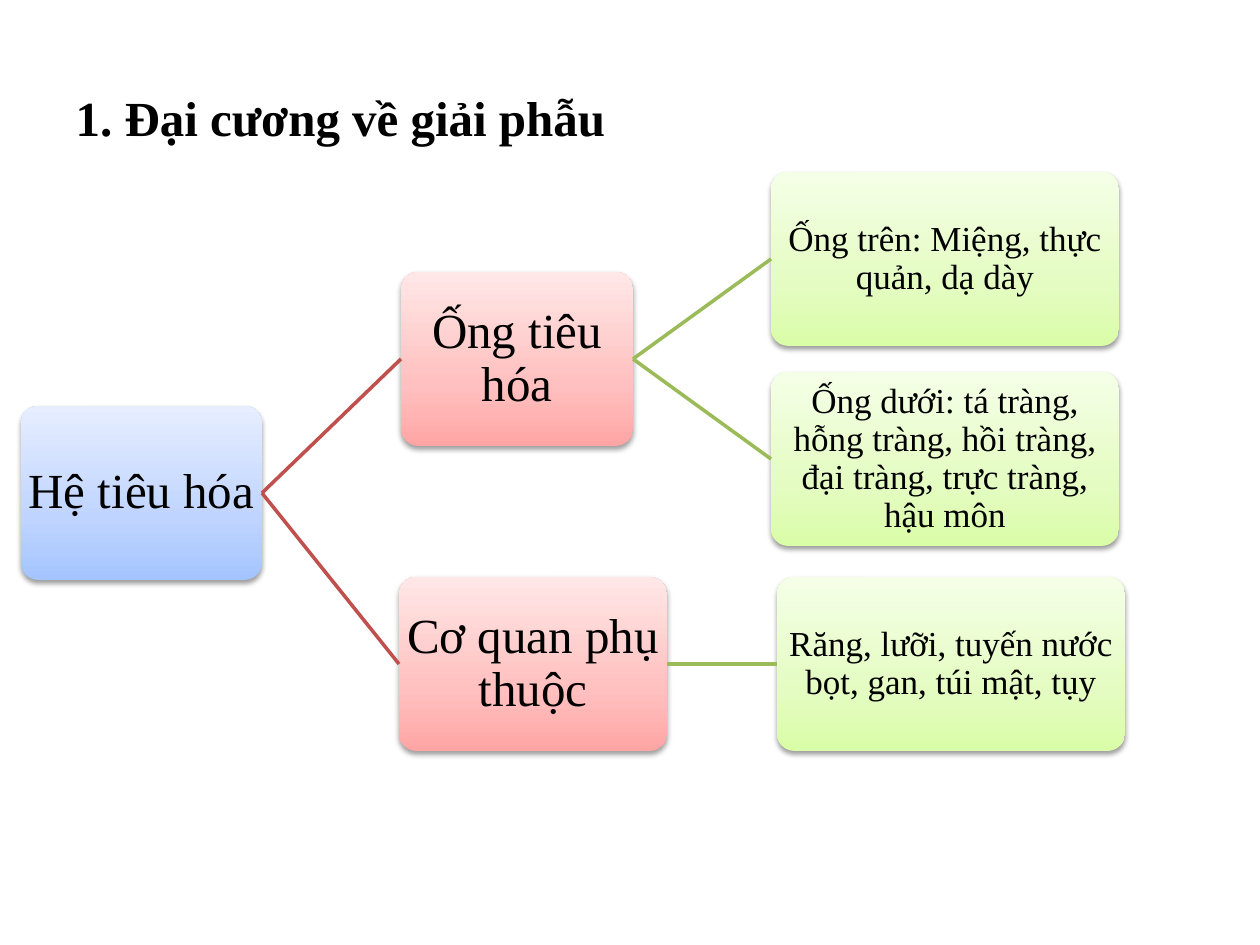
import pptx
import pptx.dml.color
import pptx.enum.shapes
import pptx.enum.text
import pptx.oxml
import pptx.oxml.ns
import pptx.util
from lxml import etree

RGBColor = pptx.dml.color.RGBColor
BLACK = RGBColor(0x00, 0x00, 0x00)
RED = RGBColor(0xC0, 0x50, 0x4D)
GREEN = RGBColor(0x9B, 0xBB, 0x59)
BLUE_STOPS = (RGBColor(0xA4, 0xC4, 0xFF), RGBColor(0xBF, 0xD4, 0xFF), RGBColor(0xE6, 0xEE, 0xFF))
RED_STOPS = (RGBColor(0xFF, 0xA6, 0xA5), RGBColor(0xFF, 0xC0, 0xBF), RGBColor(0xFF, 0xE7, 0xE7))
GREEN_STOPS = (RGBColor(0xDA, 0xFD, 0xA7), RGBColor(0xE4, 0xFC, 0xC2), RGBColor(0xF5, 0xFF, 0xE7))
FONT = "Times New Roman"
PX = 914400 / 126
BOX_HEIGHT = 174
NAMESPACE = pptx.oxml.ns.nsdecls("a")


def px(*lengths):
    return [pptx.util.Emu(round(length * PX)) for length in lengths]


def format_text(paragraph, size, alignment, bold=False):
    paragraph.alignment = alignment
    for run in paragraph.runs:
        run.font.name = FONT
        run.font.size = pptx.util.Pt(size)
        run.font.bold = bold
        run.font.color.rgb = BLACK


presentation = pptx.Presentation()
presentation.slide_width, presentation.slide_height = px(1260, 945)
slide = presentation.slides.add_slide(presentation.slide_layouts[5])

# Title
title = slide.shapes.title
title.left, title.top, title.width, title.height = px(63, 38, 1134, 157)
title.text_frame.text = "1. Đại cương về giải phẫu"
title.text_frame.vertical_anchor = pptx.enum.text.MSO_ANCHOR.MIDDLE
format_text(title.text_frame.paragraphs[0], 28, pptx.enum.text.PP_ALIGN.LEFT, bold=True)

# Levels of the tree: gradient from the bottom up, text size, link colour
levels = [(BLUE_STOPS, 28, None), (RED_STOPS, 28, RED), (GREEN_STOPS, 20, GREEN)]

# Boxes: name, parent, level, left, top, width, text
nodes = [
    ("system", None, 0, 21, 406, 241, "Hệ tiêu hóa"),
    ("tube", "system", 1, 401, 272, 232, "Ống tiêu hóa"),
    ("upper", "tube", 2, 771, 172, 348, "Ống trên: Miệng, thực quản, dạ dày"),
    ("lower", "tube", 2, 771, 372, 348,
     "Ống dưới: tá tràng, hỗng tràng, hồi tràng, đại tràng, trực tràng, hậu môn"),
    ("organs", "system", 1, 399, 577, 268, "Cơ quan phụ thuộc"),
    ("glands", "organs", 2, 777, 577, 348, "Răng, lưỡi, tuyến nước bọt, gan, túi mật, tụy"),
]

boxes = {}
for name, parent, level, left, top, width, text in nodes:
    stops, size, link_color = levels[level]
    box = slide.shapes.add_shape(
        pptx.enum.shapes.MSO_SHAPE.ROUNDED_RECTANGLE, *px(left, top, width, BOX_HEIGHT))
    boxes[name] = box
    box.adjustments[0] = 0.1
    box.line.fill.background()
    box.shadow.inherit = False

    # Three-stop gradient and soft shadow
    stop_xml = "".join(
        f'<a:gs pos="{position}"><a:srgbClr val="{color}"/></a:gs>'
        for position, color in zip((0, 35000, 100000), stops))
    properties = box._element.spPr
    properties.find(pptx.oxml.ns.qn("a:prstGeom")).addnext(pptx.oxml.parse_xml(
        f'<a:gradFill {NAMESPACE} rotWithShape="1"><a:gsLst>{stop_xml}</a:gsLst>'
        '<a:lin ang="16200000" scaled="0"/></a:gradFill>'))
    properties.find(pptx.oxml.ns.qn("a:effectLst")).append(pptx.oxml.parse_xml(
        f'<a:outerShdw {NAMESPACE} blurRad="40000" dist="20000" dir="5400000" rotWithShape="0">'
        '<a:srgbClr val="000000"><a:alpha val="38000"/></a:srgbClr></a:outerShdw>'))

    # Text
    frame = box.text_frame
    frame.text = text
    frame.word_wrap = True
    frame.vertical_anchor = pptx.enum.text.MSO_ANCHOR.MIDDLE
    frame.margin_left, frame.margin_right, frame.margin_top, frame.margin_bottom = px(2, 2, 2, 2)
    frame.paragraphs[0].line_spacing = 0.9
    format_text(frame.paragraphs[0], size, pptx.enum.text.PP_ALIGN.CENTER)

    # Link from the parent's right side to this box's left side
    if parent:
        link = slide.shapes.add_connector(pptx.enum.shapes.MSO_CONNECTOR.STRAIGHT, 0, 0, 0, 0)
        link.begin_connect(boxes[parent], 3)
        link.end_connect(box, 1)
        link.line.color.rgb = link_color
        link.line.width = pptx.util.Pt(2)
        etree.SubElement(link._element.spPr, pptx.oxml.ns.qn("a:effectLst"))

presentation.save("out.pptx")
